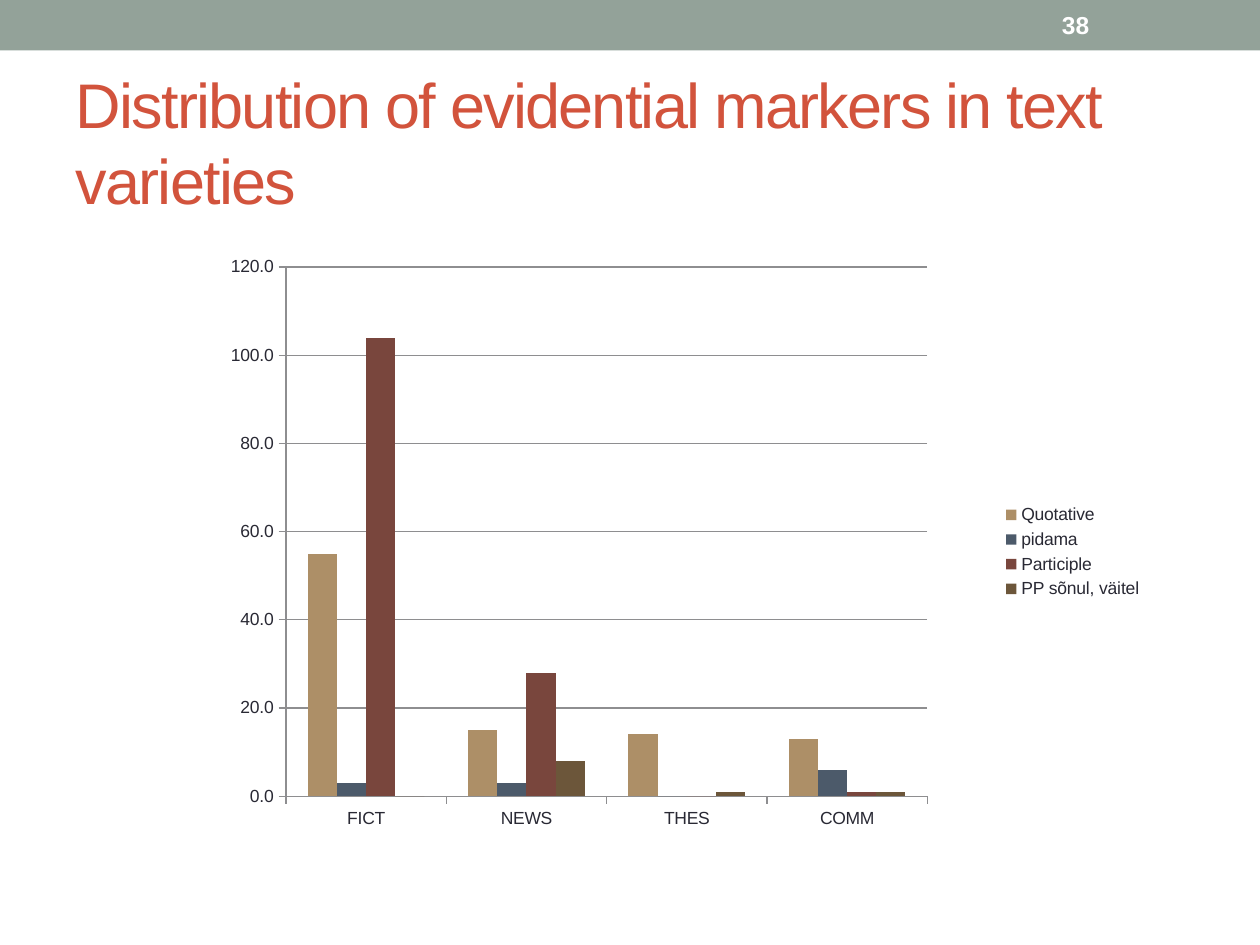
from lxml.etree import SubElement
from pptx import Presentation
from pptx.chart.data import CategoryChartData
from pptx.dml.color import RGBColor
from pptx.enum.chart import XL_CHART_TYPE, XL_LEGEND_POSITION, XL_TICK_MARK
from pptx.enum.shapes import MSO_SHAPE
from pptx.enum.text import MSO_ANCHOR, PP_ALIGN
from pptx.oxml.ns import qn
from pptx.util import Emu, Pt

EMU_PER_PX = 9144
CATEGORIES = ["FICT", "NEWS", "THES", "COMM"]
SERIES = [
    ("Quotative", [55, 15, 14, 13], "AD8F67"),
    ("pidama ", [3, 3, 0, 6], "4C5A6A"),
    ("Participle", [104, 28, 0, 1], "79463D"),
    ("PP sõnul, väitel", [0, 8, 1, 1], "6C563A"),
]


def px(length):
    return Emu(length * EMU_PER_PX)


def color(value):
    return RGBColor.from_string(value)


def format_font(font, size, fill, bold=False):
    font.name = "Arial"
    font.size = Pt(size)
    font.bold = bold
    font.color.rgb = color(fill)


def write_text(shape, text, size, fill, bold=False, spacing=0):
    frame = shape.text_frame
    frame.word_wrap = True
    frame.vertical_anchor = MSO_ANCHOR.MIDDLE
    paragraph = frame.paragraphs[0]
    paragraph.alignment = PP_ALIGN.LEFT
    run = paragraph.add_run()
    run.text = text
    format_font(run.font, size, fill, bold)
    if spacing:
        run._r.get_or_add_rPr().set("spc", str(spacing * 100))


def set_plot_area(chart, area):
    plot_area = chart._chartSpace.chart.plotArea
    for old in plot_area.findall(qn("c:layout")):
        plot_area.remove(old)
    layout = SubElement(plot_area, qn("c:layout"))
    plot_area.insert(0, layout)
    manual = SubElement(layout, qn("c:manualLayout"))
    settings = {"layoutTarget": "inner", "xMode": "edge", "yMode": "edge", **area}
    for name, value in settings.items():
        SubElement(manual, qn(f"c:{name}")).set("val", str(value))


class SlideBuilder:
    accent = "D2533C"
    band = "93A299"
    ink = "292934"
    rule = "8E8E90"
    light = "FFFFFF"

    def __init__(self, slide):
        self.slide = slide

    def add_band(self, left, top, width, height):
        shape = self.slide.shapes.add_shape(
            MSO_SHAPE.RECTANGLE, px(left), px(top), px(width), px(height))
        shape.shadow.inherit = False
        shape.fill.solid()
        shape.fill.fore_color.rgb = color(self.band)
        shape.line.fill.background()

    def set_title(self, text, left, top, width, height):
        title = self.slide.shapes.title
        title.left, title.top = px(left), px(top)
        title.width, title.height = px(width), px(height)
        write_text(title, text, size=36, fill=self.accent, spacing=-1)

    def add_page_number(self, text, left, top, width, height):
        shape = self.slide.shapes.add_textbox(px(left), px(top), px(width), px(height))
        write_text(shape, text, size=14, fill=self.light, bold=True)

    def style_line(self, line):
        line.color.rgb = color(self.rule)
        line.width = Pt(0.75)

    def style_axis(self, axis):
        format_font(axis.tick_labels.font, 10, self.ink)
        axis.major_tick_mark = XL_TICK_MARK.OUTSIDE
        axis.minor_tick_mark = XL_TICK_MARK.NONE
        self.style_line(axis.format.line)

    def add_column_chart(self, left, top, width, height, plot_box):
        data = CategoryChartData(number_format="0.0")
        data.categories = CATEGORIES
        for name, values, _ in SERIES:
            data.add_series(name, values)
        chart = self.slide.shapes.add_chart(
            XL_CHART_TYPE.COLUMN_CLUSTERED,
            px(left), px(top), px(width), px(height), data).chart
        chart.has_title = False
        format_font(chart.font, 10, self.ink)
        chart.has_legend = True
        chart.legend.position = XL_LEGEND_POSITION.RIGHT
        chart.legend.include_in_layout = False
        format_font(chart.legend.font, 10, self.ink)

        self.style_axis(chart.category_axis)
        value_axis = chart.value_axis
        self.style_axis(value_axis)
        value_axis.minimum_scale = 0
        value_axis.maximum_scale = 120
        value_axis.major_unit = 20
        value_axis.has_major_gridlines = True
        self.style_line(value_axis.major_gridlines.format.line)
        value_axis.tick_labels.number_format = "0.0"
        value_axis.tick_labels.number_format_is_linked = False

        plot = chart.plots[0]
        plot.gap_width = 150
        plot.overlap = 0
        plot.vary_by_categories = False
        for series, (_, _, fill) in zip(plot.series, SERIES):
            series.format.fill.solid()
            series.format.fill.fore_color.rgb = color(fill)
        sizes = (width, height, width, height)
        set_plot_area(chart, {
            name: length / size for name, length, size in zip("xywh", plot_box, sizes)})


def main():
    presentation = Presentation()
    presentation.slide_width = px(1000)
    presentation.slide_height = px(750)
    builder = SlideBuilder(presentation.slides.add_slide(presentation.slide_layouts[5]))
    builder.add_band(0, 0, 1000, 40)
    builder.set_title("Distribution of evidential markers in text varieties", 50, 58, 900, 108)
    builder.add_page_number("38", 833, 2, 117, 36)
    builder.add_column_chart(106, 186, 811, 504, plot_box=(121, 26, 509, 420))
    presentation.save("out.pptx")


if __name__ == "__main__":
    main()
